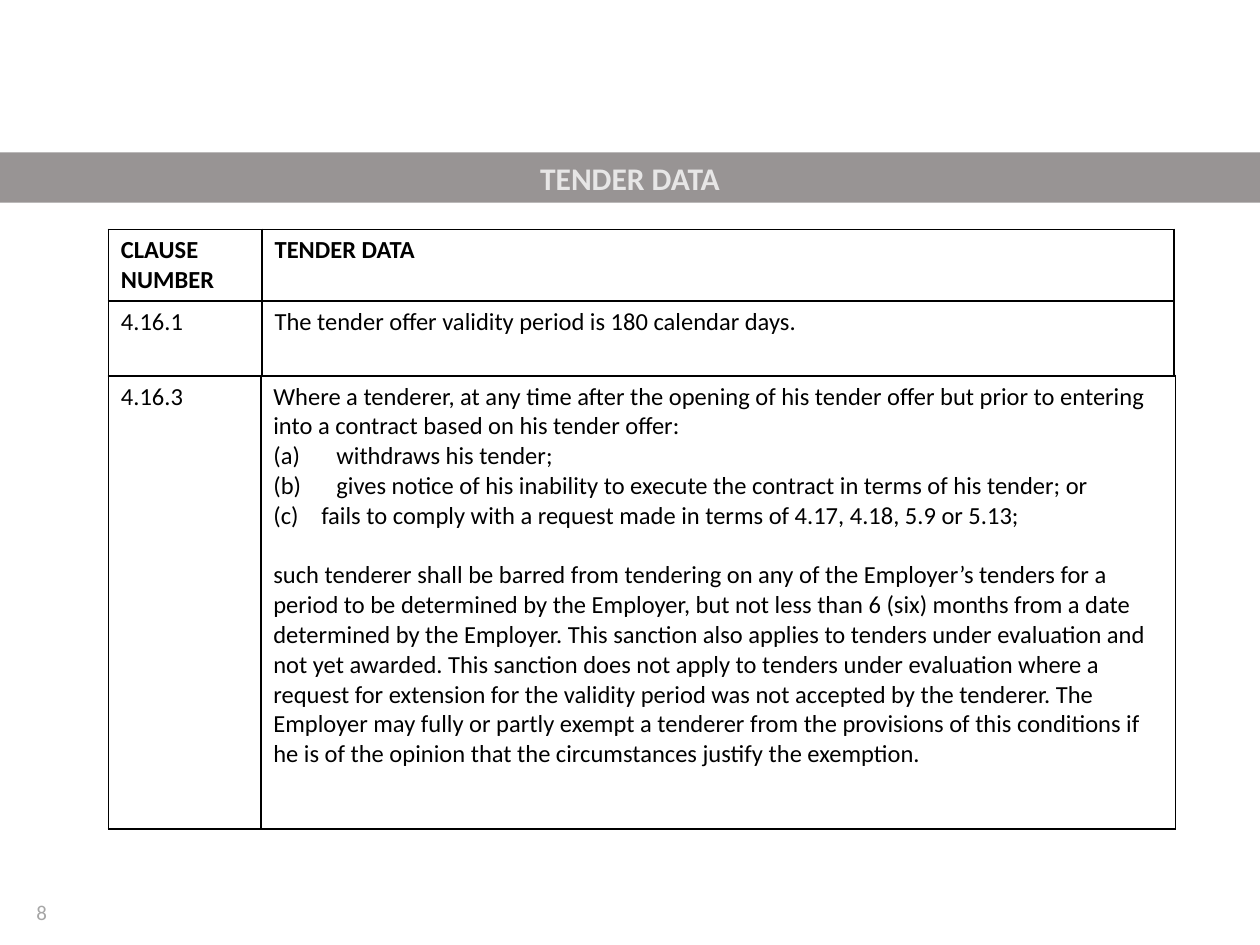
from lxml import etree
from pptx import Presentation
from pptx.dml.color import RGBColor
from pptx.enum.shapes import MSO_SHAPE
from pptx.enum.text import MSO_ANCHOR as Anchor, PP_ALIGN as Align
from pptx.oxml.ns import qn
from pptx.util import Inches, Pt

COLORS = {"ink": "000000", "band": "989494", "band_text": "E7E6E6", "number": "A6A6A6"}


def write(frame, text, size=14, color="ink", bold=False, align=Align.LEFT,
          first=True, before=0, number_from=None):
    """Write one paragraph, numbered (a), (b)... when number_from is given."""
    para = frame.paragraphs[0] if first else frame.add_paragraph()
    if number_from:
        props = para._p.get_or_add_pPr()
        props.set("marL", str(Inches(0.38)))
        props.set("indent", str(-Inches(0.38)))
        etree.SubElement(props, qn("a:buAutoNum"), type="alphaLcParenBoth",
                         startAt=str(number_from))
    para.alignment = align
    if before:
        para.space_before = Pt(before)
    span = para.add_run()
    span.text = text
    span.font.name = "Calibri"
    span.font.size = Pt(size)
    span.font.bold = bold
    span.font.color.rgb = RGBColor.from_string(COLORS[color])


def add_grid(page, top, widths, heights):
    """Add an unfilled table with thin black borders."""
    frame = page.shapes.add_table(len(heights), len(widths), Inches(0.86), Inches(top),
                                  Inches(sum(widths)), Inches(sum(heights)))
    table = frame.table
    table.first_row = table.horz_banding = False
    for column, width in zip(table.columns, widths):
        column.width = Inches(width)
    for row, height in zip(table.rows, heights):
        row.height = Inches(height)
    for cell in table.iter_cells():
        cell.fill.background()
        props = cell._tc.get_or_add_tcPr()
        for place, side in enumerate(("lnL", "lnR", "lnT", "lnB")):
            line = etree.Element(qn(f"a:{side}"), w=str(Pt(1)))
            fill = etree.SubElement(line, qn("a:solidFill"))
            etree.SubElement(fill, qn("a:srgbClr"), val=COLORS["ink"])
            props.insert(place, line)
    return table


deck = Presentation()
deck.slide_width, deck.slide_height = Inches(10), Inches(7.5)
page = deck.slides.add_slide(deck.slide_layouts[6])

# Page number
box = page.shapes.add_textbox(Inches(0.19), Inches(7.04), Inches(2.25), Inches(0.4))
box.text_frame.word_wrap = True
box.text_frame.vertical_anchor = Anchor.MIDDLE
write(box.text_frame, "8", size=12, color="number")

# Heading and validity clause
clauses = [
    ("CLAUSE NUMBER", "TENDER DATA"),
    ("4.16.1", "The tender offer validity period is 180 calendar days."),
]
validity = add_grid(page, 1.82, [1.22, 7.24], [0.56, 0.6])
for r, clause in enumerate(clauses):
    for c, text in enumerate(clause):
        write(validity.cell(r, c).text_frame, text, bold=r == 0)

# Sanction clause
sanction = add_grid(page, 2.98, [1.21, 7.26], [3.6])
write(sanction.cell(0, 0).text_frame, "4.16.3")
body = sanction.cell(0, 1).text_frame
write(body, "Where a tenderer, at any time after the opening of his tender offer but prior "
            "to entering into a contract based on his tender offer:")
write(body, "(a)\twithdraws his tender;", first=False)
write(body, "(b)\tgives notice of his inability to execute the contract in terms of his "
            "tender; or", first=False)
write(body, "fails to comply with a request made in terms of 4.17, 4.18, 5.9 or 5.13;",
      first=False, number_from=3)
write(body, "such tenderer shall be barred from tendering on any of the Employer’s tenders "
            "for a period to be determined by the Employer, but not less than 6 (six) months "
            "from a date determined by the Employer. This sanction also applies to tenders "
            "under evaluation and not yet awarded. This sanction does not apply to tenders "
            "under evaluation where a request for extension for the validity period was not "
            "accepted by the tenderer. The Employer may fully or partly exempt a tenderer "
            "from the provisions of this conditions if he is of the opinion that the "
            "circumstances justify the exemption.", first=False, before=17)

# Title band
band = page.shapes.add_shape(MSO_SHAPE.RECTANGLE, 0, Inches(1.21), Inches(10), Inches(0.4))
band.shadow.inherit = False
band.fill.solid()
band.fill.fore_color.rgb = RGBColor.from_string(COLORS["band"])
band.line.fill.background()
band.text_frame.vertical_anchor = Anchor.MIDDLE
write(band.text_frame, "TENDER DATA", size=18, color="band_text", bold=True,
      align=Align.CENTER)

deck.save("out.pptx")
